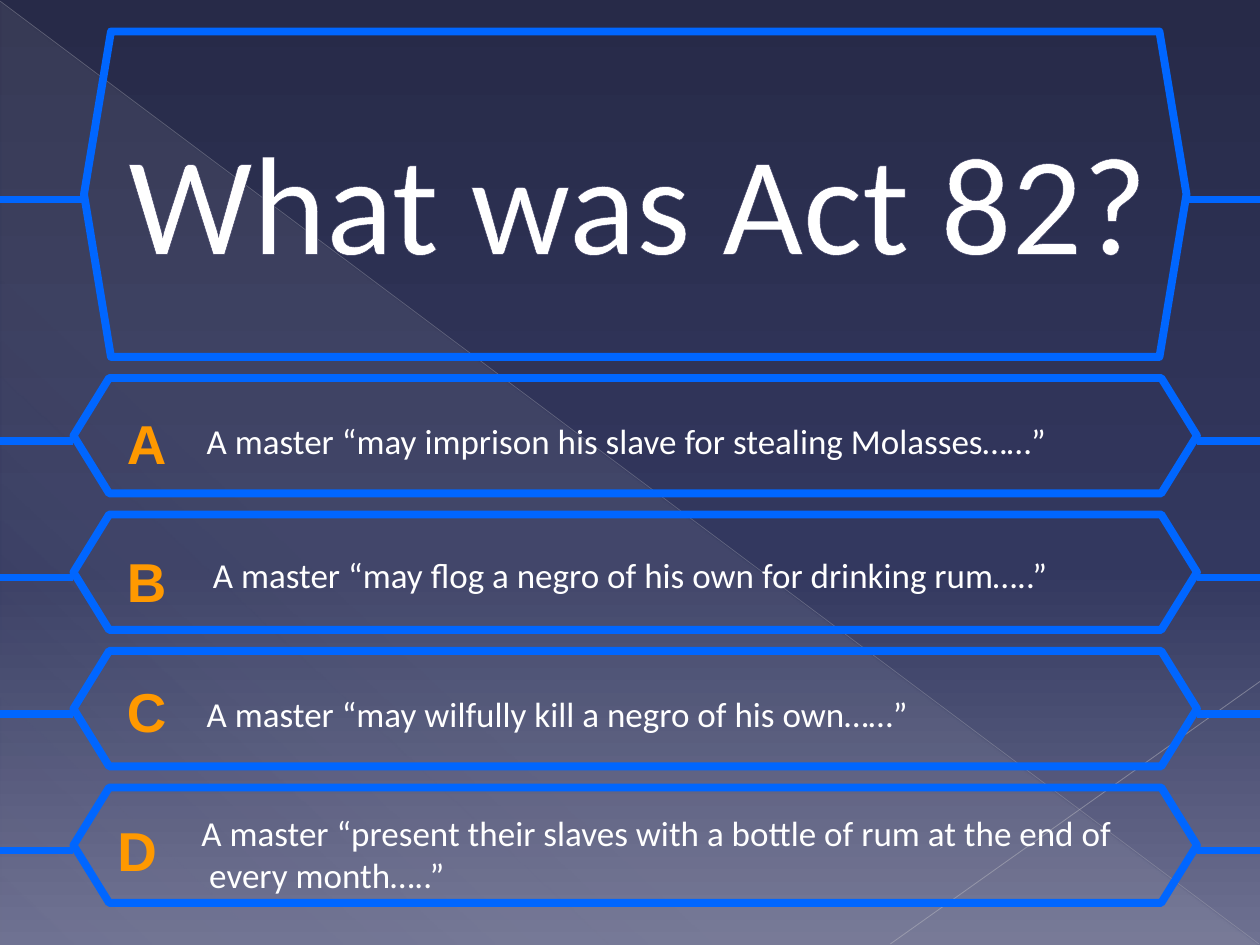
from dataclasses import dataclass

from lxml.etree import SubElement
from pptx import Presentation
from pptx.dml.color import RGBColor
from pptx.enum.shapes import MSO_CONNECTOR, MSO_SHAPE
from pptx.enum.text import MSO_ANCHOR, MSO_AUTO_SIZE, PP_ALIGN
from pptx.oxml import parse_xml
from pptx.oxml.ns import nsdecls, qn
from pptx.util import Inches, Pt

COLUMNS, ROWS = 120, 90
SLIDE_WIDTH, SLIDE_HEIGHT = Inches(10), Inches(7.5)
BLUE, ORANGE, WHITE, TEXT_EDGE = "0066FF", "FF9900", "FFFFFF", "3A3A60"
FRAME_LINE = 4.5
FIRST_ANSWER_ROW, ANSWER_PITCH = 36, 13


@dataclass
class Frame:
    column: float
    row: float
    columns: float
    rows: float
    slant: float
    wire_drop: float


@dataclass
class Answer:
    letter: str
    lines: list[str]
    letter_column: float
    letter_drop: float
    text_column: float
    text_drop: float
    text_columns: float
    text_rows: float = 5.3


ANSWERS = [
    Answer("A", ["A master “may imprison his slave for stealing Molasses……”"],
           10.9, -0.5, 18.5, 3.4, 83.4),
    Answer("B", ["A master “may flog a negro of his own for drinking rum…..”"],
           10.9, -0.3, 19.1, 3.1, 83.5),
    Answer("C", ["A master “may wilfully kill a negro of his own……”"],
           10.9, -0.9, 18.5, 3.4, 70.6),
    Answer("D", ["A master “present their slaves with a bottle of rum at the end of",
                 " every month…..”"],
           10, -0.7, 18, 1.7, 90, 9.2),
]


def across(columns: float) -> int:
    return round(SLIDE_WIDTH * columns / COLUMNS)


def down(rows: float) -> int:
    return round(SLIDE_HEIGHT * rows / ROWS)


def box(column: float, row: float, columns: float, rows: float) -> tuple:
    return across(column), down(row), across(columns), down(rows)


def color(hex_code: str) -> RGBColor:
    return RGBColor.from_string(hex_code)


def gradient(stops: list[tuple], angle: int):
    """Each stop is position %, colour, opacity %."""
    marks = "".join(
        f'<a:gs pos="{place * 1000}"><a:srgbClr val="{hex_code}">'
        f'<a:alpha val="{opacity * 1000}"/></a:srgbClr></a:gs>'
        for place, hex_code, opacity in stops)
    return parse_xml(f'<a:gradFill {nsdecls("a")} rotWithShape="1"><a:gsLst>{marks}</a:gsLst>'
                     f'<a:lin ang="{angle * 60000}" scaled="0"/></a:gradFill>')


def apply_gradient(fill, holder, stops: list[tuple], angle: int) -> None:
    fill.gradient()
    plain = holder.find(qn("a:gradFill"))
    holder.replace(plain, gradient(stops, angle))


def draw_line(shapes, start: tuple, end: tuple, hex_code: str,
              width: float, opacity: int = 100) -> None:
    line = shapes.add_connector(MSO_CONNECTOR.STRAIGHT, across(start[0]), down(start[1]),
                                across(end[0]), down(end[1]))
    line.line.color.rgb = color(hex_code)
    line.line.width = Pt(width)
    properties = line._element.spPr
    if opacity < 100:
        tint = properties.find(".//" + qn("a:srgbClr"))
        SubElement(tint, qn("a:alpha"), val=str(opacity * 1000))
    SubElement(properties, qn("a:effectLst"))


def draw_frame(shapes, frame: Frame) -> None:
    hexagon = shapes.add_shape(MSO_SHAPE.HEXAGON,
                               *box(frame.column, frame.row, frame.columns, frame.rows))
    hexagon.adjustments[0] = frame.slant
    hexagon.shadow.inherit = False
    hexagon.fill.background()
    hexagon.line.color.rgb = color(BLUE)
    hexagon.line.width = Pt(FRAME_LINE)
    wire_row = frame.row + frame.wire_drop
    for corner, edge in ((frame.column, 0), (frame.column + frame.columns, COLUMNS)):
        draw_line(shapes, (corner, wire_row), (edge, wire_row), BLUE, FRAME_LINE)


def add_run(paragraph, text: str, font: str, size: int, hex_code: str, bold: bool = False):
    run = paragraph.add_run()
    run.text = text
    run.font.name = font
    run.font.size = Pt(size)
    run.font.bold = bold
    run.font.color.rgb = color(hex_code)
    return run


def draw_answer(shapes, answer: Answer, row: float) -> None:
    letter = shapes.add_textbox(*box(answer.letter_column, row + answer.letter_drop, 5.8, 12.1))
    letter.text_frame.word_wrap = True
    letter.text_frame.auto_size = MSO_AUTO_SIZE.SHAPE_TO_FIT_TEXT
    run = add_run(letter.text_frame.paragraphs[0], answer.letter, "Arial", 54, ORANGE, True)
    run.font._element.set("baseline", "10000")

    wording = shapes.add_textbox(*box(answer.text_column, row + answer.text_drop,
                                      answer.text_columns, answer.text_rows)).text_frame
    wording.word_wrap = False
    wording.auto_size = MSO_AUTO_SIZE.SHAPE_TO_FIT_TEXT
    for number, line in enumerate(answer.lines):
        paragraph = wording.add_paragraph() if number else wording.paragraphs[0]
        add_run(paragraph, line, "Calibri", 20, WHITE)


def draw_backdrop(slide) -> None:
    fill = slide.background.fill
    fill.solid()
    holder = slide._element.find(".//" + qn("p:bgPr"))
    apply_gradient(fill, holder,
                   [(0, "272A48", 100), (60, "33385F", 100), (100, "6E7191", 100)], 90)
    triangle = slide.shapes.add_shape(MSO_SHAPE.RIGHT_TRIANGLE, *box(0.1, 0.2, 119.8, 89.8))
    triangle.shadow.inherit = False
    triangle.line.fill.background()
    apply_gradient(triangle.fill, triangle._element.spPr,
                   [(0, "DEDEDE", 10), (70, "DEDEDE", 8), (100, "DEDEDE", 1)], 133)
    draw_line(slide.shapes, (0, 0.1), (119.9, 89.9), "B7B7BE", 0.39, 35)
    draw_line(slide.shapes, (120, 64.9), (84.8, 89.9), "BFBFC5", 0.47, 45)


def place_question(slide) -> None:
    title = slide.shapes.title
    title.left, title.top, title.width, title.height = box(4.1, 10.3, 110, 17.4)
    words = title.text_frame
    words.word_wrap = False
    words.auto_size = MSO_AUTO_SIZE.SHAPE_TO_FIT_TEXT
    words.vertical_anchor = MSO_ANCHOR.TOP
    paragraph = words.paragraphs[0]
    paragraph.alignment = PP_ALIGN.CENTER
    indents = paragraph._p.get_or_add_pPr()
    indents.set("marL", str(across(6.4)))
    indents.set("indent", "0")
    run = add_run(paragraph, "What was Act 82? ", "Calibri", 80, WHITE)
    run.font._element.insert(0, parse_xml(
        f'<a:ln {nsdecls("a")} w="{Pt(0.5)}"><a:solidFill>'
        f'<a:srgbClr val="{TEXT_EDGE}"/></a:solidFill></a:ln>'))
    # Bring the question in front of the backdrop
    slide.shapes._spTree.append(title._element)


def main() -> None:
    presentation = Presentation()
    presentation.slide_width, presentation.slide_height = SLIDE_WIDTH, SLIDE_HEIGHT
    slide = presentation.slides.add_slide(presentation.slide_layouts[5])
    draw_backdrop(slide)

    # Question
    draw_frame(slide.shapes, Frame(8, 3, 105, 31, 0.083, 16))
    place_question(slide)

    # Answers
    for number, answer in enumerate(ANSWERS):
        row = FIRST_ANSWER_ROW + number * ANSWER_PITCH
        draw_frame(slide.shapes, Frame(7, row, 107, 11, 0.309, 6))
        draw_answer(slide.shapes, answer, row)

    presentation.save("out.pptx")


if __name__ == "__main__":
    main()
